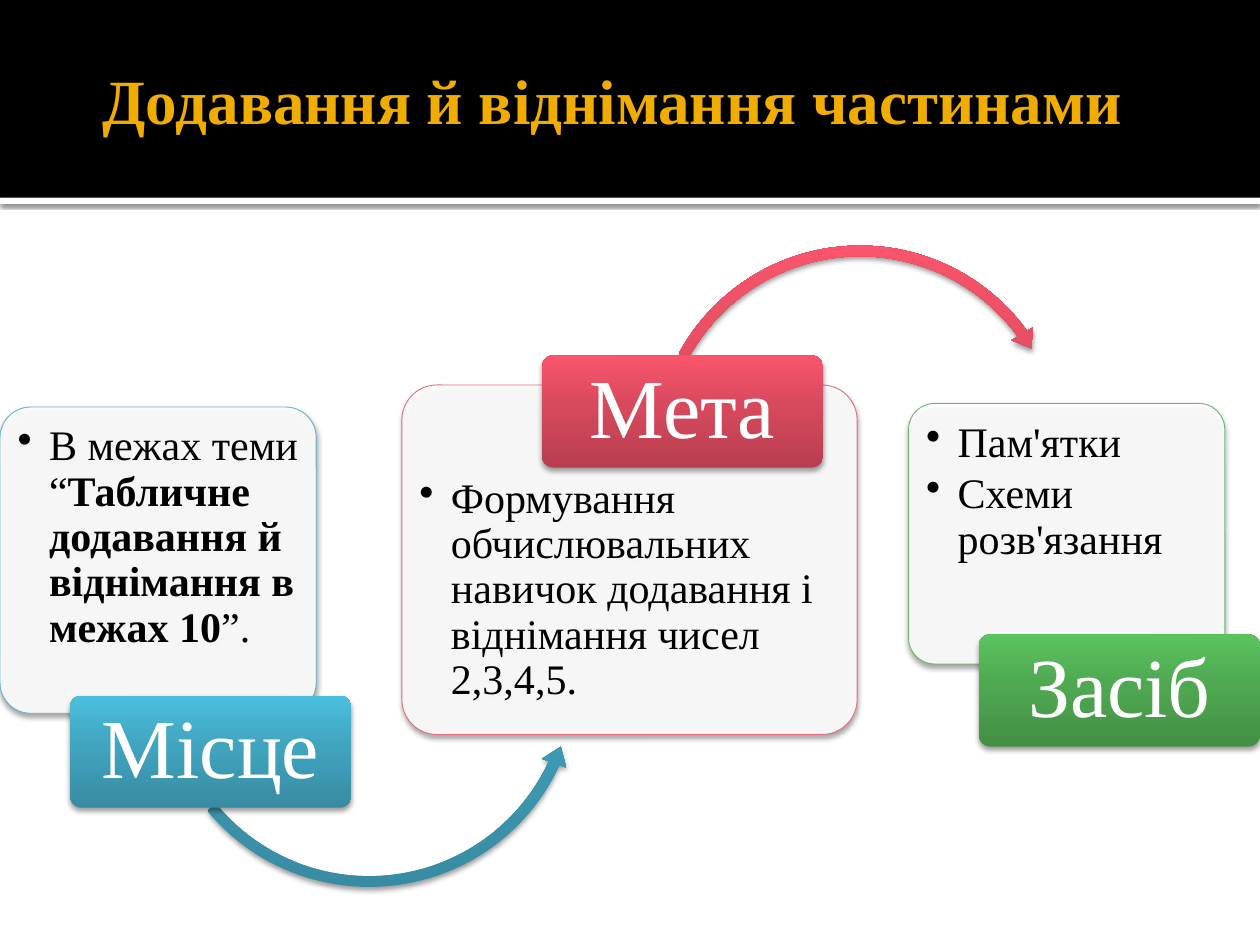
import copy

import pptx
import pptx.dml.color
import pptx.enum.shapes
import pptx.enum.text
import pptx.oxml
import pptx.oxml.ns
import pptx.util
from lxml import etree

Pt = pptx.util.Pt
RGBColor = pptx.dml.color.RGBColor
MSO_SHAPE = pptx.enum.shapes.MSO_SHAPE
PP_ALIGN = pptx.enum.text.PP_ALIGN
MSO_ANCHOR = pptx.enum.text.MSO_ANCHOR
qn = pptx.oxml.ns.qn

FONT = "Times New Roman"
BLACK = RGBColor(0x00, 0x00, 0x00)
WHITE = RGBColor(0xFF, 0xFF, 0xFF)
GOLD = RGBColor(0xF0, 0xAD, 0x00)
BLUE_LINE = RGBColor(0x60, 0xB5, 0xCC)
RED_LINE = RGBColor(0xE6, 0x6C, 0x7D)
GREEN_LINE = RGBColor(0x6B, 0xB7, 0x6D)
BLUES = [RGBColor(0x37, 0x8B, 0xA2), RGBColor(0x41, 0xA4, 0xBF), RGBColor(0x4B, 0xBF, 0xDE)]
REDS = [RGBColor(0xB7, 0x3E, 0x4F), RGBColor(0xD7, 0x49, 0x5D), RGBColor(0xFA, 0x55, 0x6C)]
GREENS = [RGBColor(0x43, 0x8F, 0x45), RGBColor(0x4F, 0xA8, 0x51), RGBColor(0x5C, 0xC3, 0x5F)]

LABEL_W, LABEL_H = 160.6, 64
CORNER = 0.1
CORNER_INSET = 0.029  # share of the short side that a rounded corner takes from the text


def add_shape(kind, box, fill, line=None, adj=(), shadow=None):
    """Fill is one colour or three gradient colours; shadow is (alpha %, blur, distance)."""
    s = shapes.add_shape(kind, *[Pt(v) for v in box])
    for i, value in enumerate(adj):
        s.adjustments[i] = value
    if isinstance(fill, list):
        s.fill.gradient()
        s.fill.gradient_angle = 90
        stops = s._element.spPr.find(".//" + qn("a:gsLst"))
        stops.append(copy.deepcopy(stops[0]))
        for stop, color, position in zip(s.fill.gradient_stops, fill, (0, 0.55, 1)):
            stop.color.rgb = color
            stop.position = position
    else:
        s.fill.solid()
        s.fill.fore_color.rgb = fill
    if line is None:
        s.line.fill.background()
    else:
        s.line.color.rgb = line
        s.line.width = Pt(0.5)
    s.shadow.inherit = False
    if shadow:
        alpha, blur, dist = shadow
        effects = s._element.spPr.find(qn("a:effectLst"))
        outer = etree.SubElement(effects, qn("a:outerShdw"), blurRad=str(Pt(blur)),
                                 dist=str(Pt(dist)), dir="5400000", rotWithShape="0")
        color = etree.SubElement(outer, qn("a:srgbClr"), val=str(BLACK))
        etree.SubElement(color, qn("a:alpha"), val=str(alpha * 1000))
    return s


def set_text(s, paragraphs, size, color, insets, bullet=False, align=PP_ALIGN.CENTER,
             anchor=MSO_ANCHOR.MIDDLE, spacing=0.9, after=0):
    """Each paragraph is a list of (text, bold) runs; insets are left, top, right, bottom."""
    tf = s.text_frame
    tf.word_wrap = True
    tf.vertical_anchor = anchor
    tf.margin_left, tf.margin_top, tf.margin_right, tf.margin_bottom = [Pt(v) for v in insets]
    for i, runs in enumerate(paragraphs):
        p = tf.add_paragraph() if i else tf.paragraphs[0]
        p.alignment = align
        p.line_spacing = spacing
        p.space_after = Pt(after)
        if bullet:
            pPr = p._p.get_or_add_pPr()
            pPr.set("marL", str(Pt(18)))
            pPr.set("indent", str(-Pt(18)))
            etree.SubElement(pPr, qn("a:buChar"), char="•")
        for text, bold in runs:
            r = p.add_run()
            r.text = text
            r.font.name = FONT
            r.font.size = Pt(size)
            r.font.bold = bold
            r.font.color.rgb = color


prs = pptx.Presentation()
prs.slide_width, prs.slide_height = Pt(720), Pt(540)
slide = prs.slides.add_slide(prs.slide_layouts[5])
shapes = slide.shapes

# Header band, with the title brought in front of it
title = shapes.title
add_shape(MSO_SHAPE.RECTANGLE, (0, 113, 720, 3.6), WHITE, shadow=(60, 2.5, 0.8))
add_shape(MSO_SHAPE.RECTANGLE, (0, 0, 720, 113), BLACK)
shapes._spTree.append(title._element)
title.left, title.top, title.width, title.height = Pt(25.2), Pt(20.9), Pt(645.8), Pt(72)
set_text(title, [[("Додавання й віднімання частинами", True)]], 36, GOLD,
         (7.2, 3.6, 3.6, 3.6), spacing=1)

# Steps: card box, space above the card text, its paragraphs, label position, curved arrow
steps = [
    dict(card=(0, 232.6, 180.7, 175), lead=0, line=BLUE_LINE, colors=BLUES,
         text=[[("В межах теми “", False),
                ("Табличне додавання й віднімання в межах 10", True), ("”.", False)]],
         label="Місце", at=(40.1, 397.6),
         arrow=(MSO_SHAPE.LEFT_CIRCULAR_ARROW, (87.1, 263.5, 247.7, 247.7),
                (0.025, 3.02, 14.88, 84.35, 0.03))),
    dict(card=(229.7, 220, 260.1, 199.7), lead=42.5, line=RED_LINE, colors=REDS,
         text=[[("Формування обчислювальних навичок додавання і віднімання чисел 2,3,4,5.",
                 False)]],
         label="Мета", at=(309.7, 203.2),
         arrow=(MSO_SHAPE.CIRCULAR_ARROW, (369.4, 136.1, 244.1, 244.1),
                (0.025, 3.06, 194.39, 124.96, 0.03))),
    dict(card=(519.2, 230.5, 180.7, 148.9), lead=0, line=GREEN_LINE, colors=GREENS,
         text=[[("Пам'ятки", False)], [("Схеми розв'язання", False)]],
         label="Засіб", at=(559.4, 362.6), arrow=None),
]
SHADOW = (38, 3.1, 2)

for step in steps:
    s = add_shape(MSO_SHAPE.ROUNDED_RECTANGLE, step["card"], WHITE, line=step["line"],
                  adj=[CORNER], shadow=SHADOW)
    color = s._element.spPr.find(qn("a:solidFill"))[0]
    etree.SubElement(color, qn("a:alpha"), val="90000")
    inset = 10 - CORNER_INSET * min(step["card"][2:])
    set_text(s, step["text"], 24, BLACK, (inset, inset + step["lead"], inset, inset),
             bullet=True, align=PP_ALIGN.LEFT, anchor=MSO_ANCHOR.TOP, after=3.6)

    if step["arrow"]:
        kind, box, adj = step["arrow"]
        add_shape(kind, box, step["colors"], adj=adj, shadow=SHADOW)

    s = add_shape(MSO_SHAPE.ROUNDED_RECTANGLE, (*step["at"], LABEL_W, LABEL_H),
                  step["colors"], adj=[CORNER], shadow=SHADOW)
    set_text(s, [[(step["label"], False)]], 48, WHITE, (5, 3, 5, 3))

prs.save("out.pptx")
